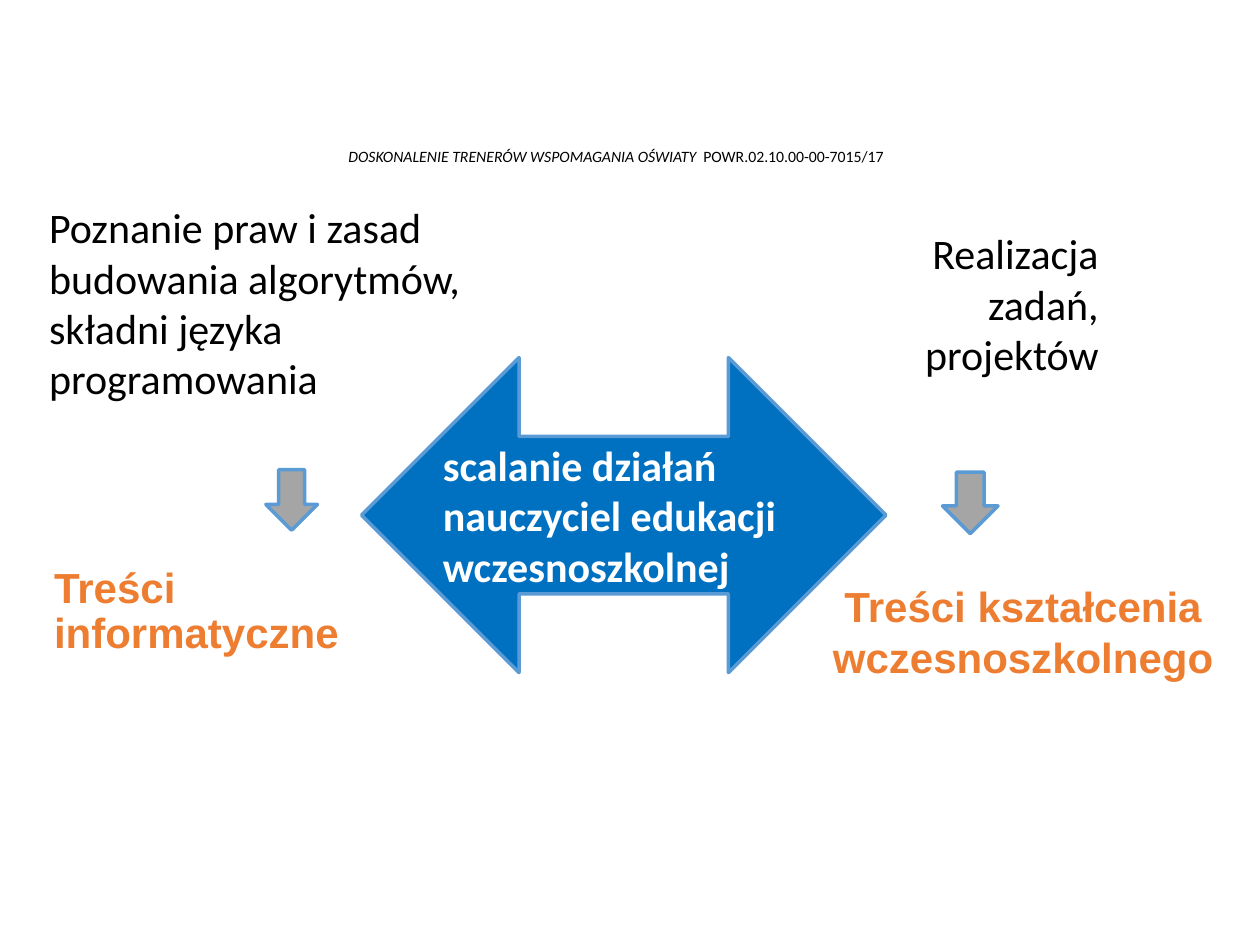
from pptx import Presentation
from pptx.dml.color import RGBColor
from pptx.enum.shapes import MSO_SHAPE as Preset
from pptx.enum.text import MSO_ANCHOR as Anchor, MSO_AUTO_SIZE as AutoSize, PP_ALIGN as Align
from pptx.util import Cm, Pt

COLORS = {
    "text": "000000",
    "accent": "ED7D31",
    "white": "FFFFFF",
    "blue": "0070C0",
    "gray": "A5A5A5",
    "outline": "5B9BD5",
}


def color(name):
    return RGBColor.from_string(COLORS[name])


def place(shape, left, top, width, height):
    shape.left, shape.top = Cm(left), Cm(top)
    shape.width, shape.height = Cm(width), Cm(height)


def add_span(para, text, size=24, font="Calibri", fill="text", bold=False, italic=False):
    span = para.add_run()
    span.text = text
    span.font.name = font
    span.font.size = Pt(size)
    span.font.bold = bold
    span.font.italic = italic
    span.font.color.rgb = color(fill)


def prepare_frame(shape, inset):
    frame = shape.text_frame
    frame.word_wrap = True
    frame.auto_size = AutoSize.NONE
    frame.vertical_anchor = Anchor.MIDDLE
    frame.margin_left = frame.margin_right = Cm(inset)
    frame.margin_top = frame.margin_bottom = Cm(inset)
    return frame


def fill_text(shape, lines, align=Align.LEFT, inset=0.05, **style):
    frame = prepare_frame(shape, inset)
    for index, line in enumerate(lines):
        para = frame.add_paragraph() if index else frame.paragraphs[0]
        para.alignment = align
        add_span(para, line, **style)
    return frame


def add_text(page, bounds, text, **style):
    box = page.shapes.add_textbox(*map(Cm, bounds))
    fill_text(box, [text], **style)


def add_arrow(page, preset, bounds, fill):
    arrow = page.shapes.add_shape(preset, *map(Cm, bounds))
    arrow.shadow.inherit = False
    arrow.fill.solid()
    arrow.fill.fore_color.rgb = color(fill)
    arrow.line.color.rgb = color("outline")
    arrow.line.width = Pt(2)
    return arrow


def add_header(page, left, top, width, height):
    box = page.shapes.add_textbox(Cm(left), Cm(top), Cm(width), Cm(height))
    frame = prepare_frame(box, 0.13)
    frame.margin_top = Cm(1.03)
    para = frame.paragraphs[0]
    para.alignment = Align.CENTER
    para.line_spacing = 0.9
    add_span(para, "DOSKONALENIE TRENERÓW WSPOMAGANIA OŚWIATY  ", size=9, italic=True)
    add_span(para, "POWR.02.10.00-00-7015/17", size=9)


def add_computing_side(page, left, top):
    title = page.shapes.title
    place(title, left, top + 6.7, 8.13, 3.3)
    frame = fill_text(title, ["Treści informatyczne"], inset=0.25,
                      font="Arial", fill="accent", bold=True)
    frame.paragraphs[0].line_spacing = 0.9
    add_text(page, (left + 0.1, top, 10.36, 4.22),
             "Poznanie praw i zasad budowania algorytmów, składni języka programowania")
    add_arrow(page, Preset.DOWN_ARROW, (left + 4.52, top + 5.48, 1.04, 1.22), "gray")


def add_teaching_side(page, left, top):
    add_text(page, (left + 1.42, top, 4.6, 3.2),
             "Realizacja zadań, projektów", align=Align.RIGHT)
    add_arrow(page, Preset.DOWN_ARROW, (left + 2.82, top + 5, 1.12, 1.24), "gray")
    add_text(page, (left, top + 5.87, 8.89, 4.67), "Treści kształcenia wczesnoszkolnego",
             align=Align.CENTER, inset=0.13, font="Arial", fill="accent", bold=True)


def add_merging_arrow(page, left, top, width, height):
    arrow = add_arrow(page, Preset.LEFT_RIGHT_ARROW, (left, top, width, height), "blue")
    fill_text(arrow, ["scalanie działań", "nauczyciel edukacji wczesnoszkolnej"],
              fill="white", bold=True)


def main():
    deck = Presentation()
    deck.slide_width, deck.slide_height = Cm(25.4), Cm(19.05)
    page = deck.slides.add_slide(deck.slide_layouts[5])
    add_header(page, 1.5, 1.17, 21.84, 3.1)
    add_computing_side(page, 0.84, 3.99)
    add_teaching_side(page, 16.18, 4.52)
    add_merging_arrow(page, 7.29, 7.21, 10.57, 6.35)
    deck.save("out.pptx")


if __name__ == "__main__":
    main()
